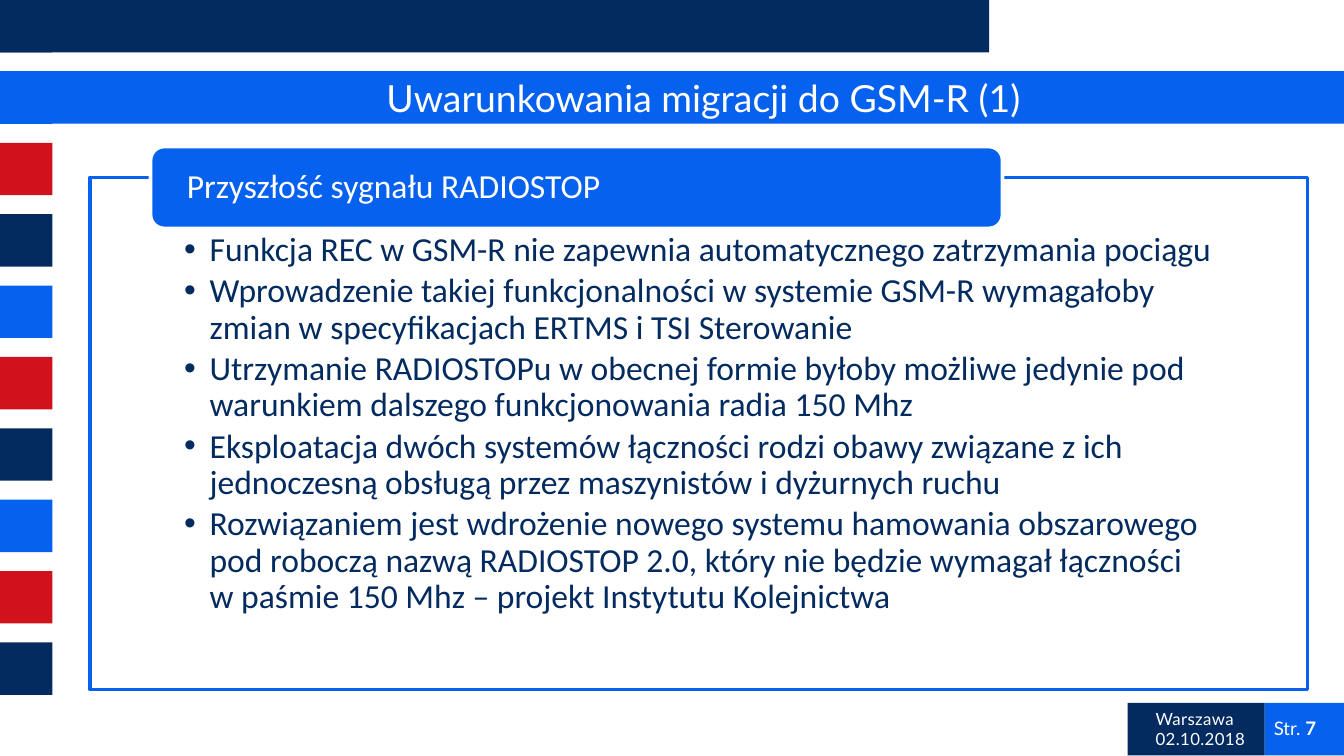
from lxml import etree
from pptx import Presentation
from pptx.dml.color import RGBColor
from pptx.enum.shapes import MSO_SHAPE
from pptx.enum.text import MSO_ANCHOR, PP_ALIGN
from pptx.oxml.ns import qn
from pptx.util import Inches, Pt

RECT, ROUND = MSO_SHAPE.RECTANGLE, MSO_SHAPE.ROUNDED_RECTANGLE
TOP, MIDDLE = MSO_ANCHOR.TOP, MSO_ANCHOR.MIDDLE
LEFT, CENTER = PP_ALIGN.LEFT, PP_ALIGN.CENTER

COLORS = {"navy": "042B60", "blue": "0661EE", "red": "D1121C", "white": "FFFFFF"}
WIDTH = 10
HEIGHT = WIDTH * 9 / 16
SIDE = 0.39
POINTS = [
    "Funkcja REC w GSM-R nie zapewnia automatycznego zatrzymania pociągu",
    "Wprowadzenie takiej funkcjonalności w systemie GSM-R wymagałoby "
    "zmian w specyfikacjach ERTMS i TSI Sterowanie",
    "Utrzymanie RADIOSTOPu w obecnej formie byłoby możliwe jedynie pod "
    "warunkiem dalszego funkcjonowania radia 150 Mhz",
    "Eksploatacja dwóch systemów łączności rodzi obawy związane z ich "
    "jednoczesną obsługą przez maszynistów i dyżurnych ruchu",
    "Rozwiązaniem jest wdrożenie nowego systemu hamowania obszarowego "
    "pod roboczą nazwą RADIOSTOP 2.0, który nie będzie wymagał łączności "
    "w paśmie 150 Mhz – projekt Instytutu Kolejnictwa",
]


def color(name):
    return RGBColor.from_string(COLORS[name])


def add_block(slide, box, fill, line=None, kind=RECT):
    block = slide.shapes.add_shape(kind, *map(Inches, box))
    block.shadow.inherit = False
    block.fill.solid()
    block.fill.fore_color.rgb = color(fill)
    if line:
        block.line.color.rgb = color(line)
        block.line.width = Pt(2)
    else:
        block.line.fill.background()
    return block


def add_frame(slide, box, anchor=MIDDLE, insets=(0.1, 0.05, 0.1, 0.05)):
    frame = slide.shapes.add_textbox(*map(Inches, box)).text_frame
    frame.word_wrap = True
    frame.vertical_anchor = anchor
    frame.margin_left, frame.margin_top, frame.margin_right, frame.margin_bottom = map(Inches, insets)
    return frame


def add_line(frame, index=0, align=LEFT):
    line = frame.add_paragraph() if index else frame.paragraphs[0]
    line.alignment = align
    return line


def add_run(line, text, size, tint="white", font="Lato", bold=False):
    run = line.add_run()
    run.text = text
    run.font.size = Pt(size)
    run.font.name = font
    run.font.bold = bold
    run.font.color.rgb = color(tint)
    return run


def add_bullet(line):
    props = line._p.get_or_add_pPr()
    props.set("marL", str(Inches(0.19)))
    props.set("indent", str(-Inches(0.19)))
    etree.SubElement(props, qn("a:buFont")).set("typeface", "Arial")
    etree.SubElement(props, qn("a:buChar")).set("char", "•")


def add_strip(slide, left, top, height):
    tints = ["navy", "blue", "red"]
    count = 10
    step = (height - SIDE) / (count - 1)
    for i in range(count):
        add_block(slide, (left, top + i * step, SIDE, SIDE), tints[i % 3])


def add_header(slide, left, top, width):
    add_block(slide, (left, top, 7.36, SIDE), "navy")
    add_block(slide, (left, top + 0.53, width, SIDE), "blue")
    frame = add_frame(slide, (left + 0.67, top + 0.53, 9.13, SIDE))
    add_run(add_line(frame, align=CENTER), "Uwarunkowania migracji do GSM-R (1)", 20)


def add_footer(slide, left, top, width):
    split = 1.02
    add_block(slide, (left + split, top, width - split, SIDE), "blue")
    add_block(slide, (left, top, split, SIDE), "navy")
    page = add_line(add_frame(slide, (left + 0.99, top + 0.08, 0.7, 0.22)))
    add_run(page, "Str. ", 10)
    add_run(page, "7", 10, bold=True)
    frame = add_frame(slide, (left + 0.11, top + 0.08, 0.91, 0.22))
    for i, text in enumerate(["Warszawa", "02.10.2018"]):
        run = add_run(add_line(frame, i), text, 9)
        run._r.get_or_add_rPr().set("spc", "20")


def add_panel(slide, left, top, width, height):
    box = left, top, width, height
    panel = add_block(slide, box, "white", "blue")
    tint = panel._element.spPr.find(qn("a:solidFill"))[0]
    etree.SubElement(tint, qn("a:alpha")).set("val", "90000")
    frame = add_frame(slide, box, TOP, (0.7, 0.41, 0.7, 0.14))
    for i, text in enumerate(POINTS):
        line = add_line(frame, i)
        line.line_spacing = 0.9
        line.space_after = Pt(2.7)
        add_bullet(line)
        add_run(line, text, 18, "navy", "Calibri")

    add_block(slide, (left + 0.45, top - 0.23, 6.34, 0.61), "blue", "white", ROUND)
    label = add_frame(slide, (left + 0.48, top - 0.2, 6.28, 0.55), insets=(0.24, 0, 0.24, 0))
    line = add_line(label)
    line.line_spacing = 0.9
    add_run(line, "Przyszłość sygnału RADIOSTOP", 18, "white", "Calibri")


def main():
    deck = Presentation()
    deck.slide_width, deck.slide_height = Inches(WIDTH), Inches(HEIGHT)
    slide = deck.slides.add_slide(deck.slide_layouts[6])
    add_strip(slide, 0, 0, 5.17)
    add_footer(slide, 8.39, 5.23, WIDTH - 8.39)
    add_header(slide, 0, 0, WIDTH)
    add_panel(slide, 0.67, 1.32, 9.06, 3.81)
    deck.save("out.pptx")


if __name__ == "__main__":
    main()
